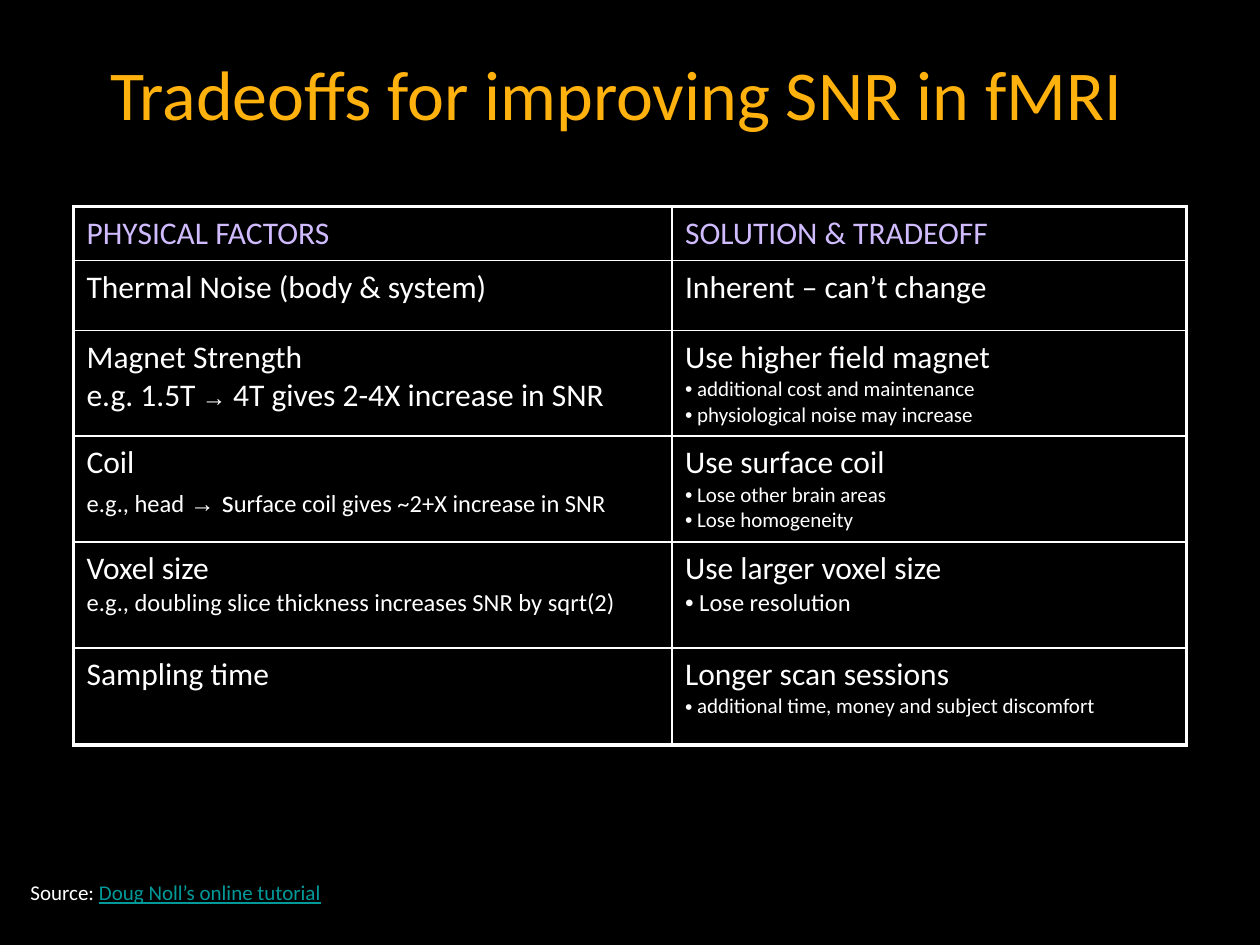
"""Build a slide with a table of SNR tradeoffs in fMRI."""
from dataclasses import dataclass
from typing import Any

from lxml import etree
from pptx import Presentation, util as u
from pptx.dml import color
from pptx.enum import text as t
from pptx.oxml import ns

HUE = {"back": "000000", "title": "FFB10E", "head": "CFBBFE",
       "text": "FFFFFF", "link": "009999"}
COLS = (342, 294)
ROWS = (29, 40, 58.5, 60.5, 60.5, 55.5)
THIN, THICK = 1, 2.25


@dataclass
class Run:
    """A stretch of text in one format."""
    text: str
    size: float = 18
    font: str = "Calibri"
    hue: str = "text"
    line: bool = False


@dataclass
class Para:
    """A paragraph of runs, with or without a bullet."""
    runs: list[Run]
    dot: bool = False


def plain(words: str, **form: Any) -> Para:
    """Return a paragraph of one run."""
    return Para([Run(words, **form)])


def point(words: str, size: float = 12) -> Para:
    """Return a bulleted paragraph."""
    return Para([Run(" " + words, size)], dot=True)


TABLE = [
    ([plain("PHYSICAL FACTORS", hue="head")],
     [plain("SOLUTION & TRADEOFF", hue="head")]),
    ([plain("Thermal Noise (body & system)")],
     [plain("Inherent – can’t change")]),
    ([plain("Magnet Strength"),
      Para([Run("e.g. 1.5T"), Run(" ", 14, "Times New Roman"),
            Run("→ ", 14, "Arial"), Run("4T gives 2-4X increase in SNR")])],
     [plain("Use higher field magnet"),
      point("additional cost and maintenance"),
      point("physiological noise may increase")]),
    ([plain("Coil"),
      Para([Run("e.g., head ", 14), Run("→ ", 14, "Arial"), Run("s"),
            Run("urface coil gives ~2+X increase in SNR", 14)])],
     [plain("Use surface coil"), point("Lose other brain areas"),
      point("Lose homogeneity")]),
    ([plain("Voxel size"),
      plain("e.g., doubling slice thickness increases SNR by sqrt(2)", size=14)],
     [plain("Use larger voxel size"), point("Lose resolution", 14)]),
    ([plain("Sampling time")],
     [plain("Longer scan sessions"),
      point("additional time, money and subject discomfort")]),
]


def add(root: Any, tag: str, **keys: str) -> Any:
    """Append a DrawingML element and return it."""
    return etree.SubElement(root, ns.qn("a:" + tag), **keys)


def tint(root: Any, hue: str) -> None:
    """Append a plain colour to an element."""
    add(root, "srgbClr", val=HUE[hue])


def write(frame: Any, paras: list[Para], *, left: float = 3,
          align: Any = t.PP_ALIGN.LEFT) -> None:
    """Fill a text frame with formatted paragraphs."""
    for i, para in enumerate(paras):
        p = frame.paragraphs[0] if i == 0 else frame.add_paragraph()
        p.alignment = align
        props = p._p.get_or_add_pPr()
        props.set("marL", str(u.Pt(left)))
        props.set("indent", "0")
        if para.dot:
            tint(add(props, "buClr"), "text")
            add(props, "buFont", typeface="Arial")
            add(props, "buChar", char="•")
        for part in para.runs:
            run = p.add_run()
            run.text = part.text
            font = run.font
            font.size, font.name = u.Pt(part.size), part.font
            font.color.rgb = color.RGBColor.from_string(HUE[part.hue])
            if part.line:
                font.underline = True


def inset(item: Any, left: float, top: float, right: float, low: float) -> None:
    """Set the margins of a frame or cell."""
    item.margin_left, item.margin_top = u.Pt(left), u.Pt(top)
    item.margin_right, item.margin_bottom = u.Pt(right), u.Pt(low)


def edge(cell: Any, thick: dict[str, bool]) -> None:
    """Draw the four borders of a cell."""
    props = cell._tc.get_or_add_tcPr()
    for side, bold in thick.items():
        width = u.Pt(THICK if bold else THIN)
        tint(add(add(props, "ln" + side, w=str(width)), "solidFill"), "text")


def grid(slide: Any) -> None:
    """Add the table of factors and tradeoffs."""
    table = slide.shapes.add_table(
        len(ROWS), len(COLS), u.Pt(42), u.Pt(118),
        u.Pt(sum(COLS)), u.Pt(sum(ROWS))).table
    table.first_row = table.horz_banding = False
    for col, width in zip(table.columns, COLS):
        col.width = u.Pt(width)
    for r, (row, high) in enumerate(zip(TABLE, ROWS)):
        table.rows[r].height = u.Pt(high)
        for c, paras in enumerate(row):
            cell = table.cell(r, c)
            inset(cell, 4.5, 4.5, 4.5, 4.5)
            edge(cell, {"L": c == 0, "R": c == len(COLS) - 1,
                        "T": r == 0, "B": r == len(ROWS) - 1})
            cell.fill.background()
            write(cell.text_frame, paras)


def main() -> None:
    """Build and save the slide."""
    deck = Presentation()
    deck.slide_width, deck.slide_height = u.Pt(720), u.Pt(540)
    slide = deck.slides.add_slide(deck.slide_layouts.get_by_name("Title Only"))
    fill = slide.background.fill
    fill.solid()
    fill.fore_color.rgb = color.RGBColor.from_string(HUE["back"])

    title = slide.shapes.title
    title.left, title.top = u.Pt(48), u.Pt(21.6)
    title.width, title.height = u.Pt(612), u.Pt(62.6)
    frame = title.text_frame
    frame.auto_size = t.MSO_AUTO_SIZE.NONE
    frame.vertical_anchor = t.MSO_ANCHOR.MIDDLE
    inset(frame, 4.5, 4.5, 11.5, 4.5)
    write(frame, [plain("Tradeoffs for improving SNR in fMRI", size=40,
                        hue="title")], left=3.5, align=t.PP_ALIGN.CENTER)

    grid(slide)

    box = slide.shapes.add_textbox(u.Pt(14.4), u.Pt(502.6), u.Pt(176.4), u.Pt(22))
    frame = box.text_frame
    frame.word_wrap = False
    inset(frame, 0, 0, 3, 0)
    write(frame, [Para([Run("Source: ", 12), Run(
        "Doug Noll’s online tutorial", 12, hue="link", line=True)])])
    deck.save("out.pptx")


if __name__ == "__main__":
    main()
